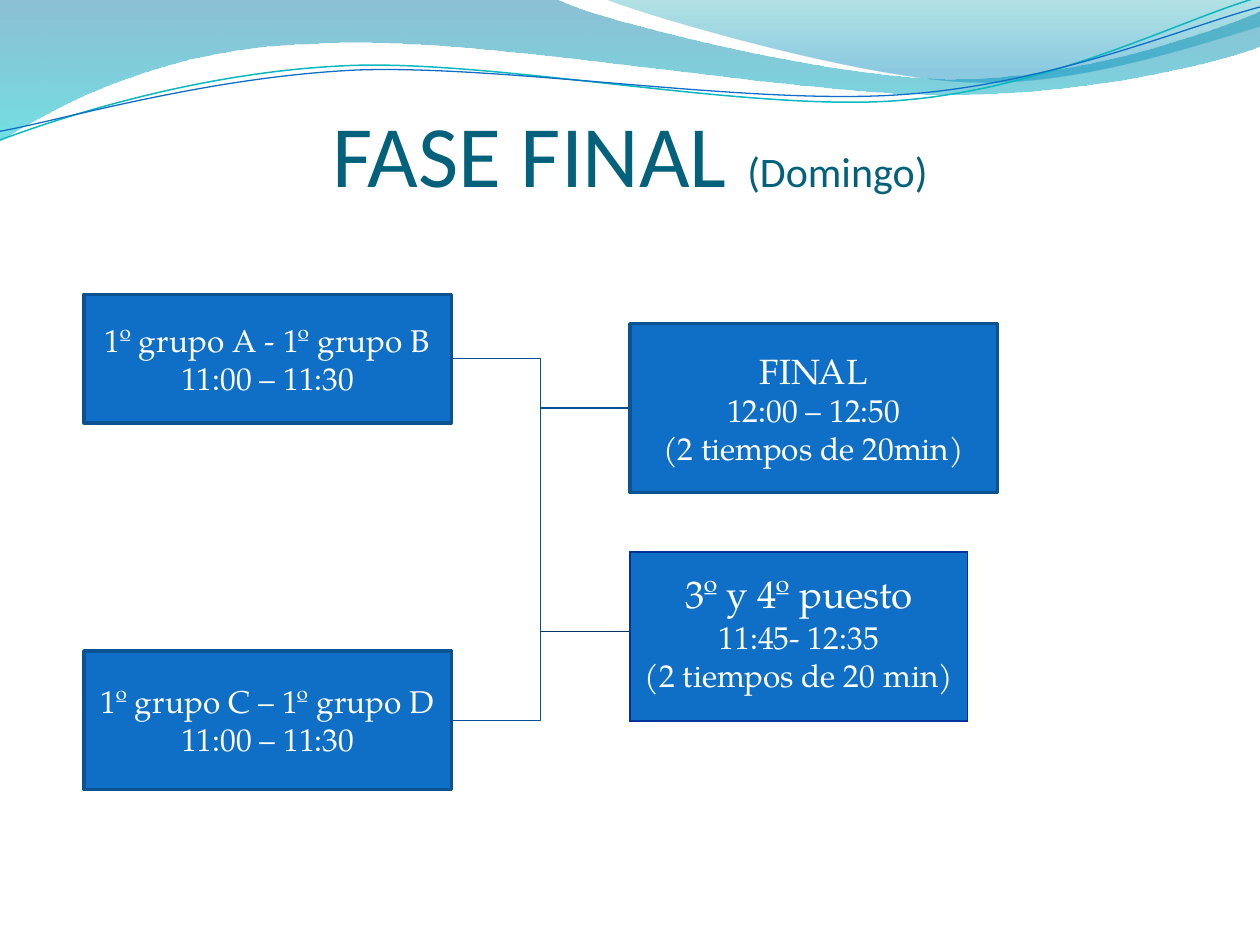
"""Build the final-phase tournament bracket slide."""
from lxml.etree import SubElement
from pptx import Presentation
from pptx.dml.color import RGBColor
from pptx.enum.shapes import MSO_CONNECTOR as Connector, MSO_SHAPE as Shape
from pptx.enum.text import MSO_ANCHOR as Anchor, MSO_AUTO_SIZE as AutoSize, PP_ALIGN as Align
from pptx.oxml.ns import qn
from pptx.util import Pt

WHITE = RGBColor(0xFF, 0xFF, 0xFF)
BLUE = RGBColor(0x0F, 0x6F, 0xC6)
BOX_EDGE = RGBColor(0x0B, 0x52, 0x92)
TABLE_EDGE = RGBColor(0x00, 0x33, 0x99)
LINK = RGBColor(0x06, 0x50, 0x93)
NAVY = RGBColor(0x00, 0x33, 0x66)
TITLE = RGBColor(0x04, 0x61, 0x7B)
TURQUOISE = RGBColor(0x0A, 0xB8, 0xBF)
LEFT, RIGHT = 1, 3

BAND_STOPS = [(0, RGBColor(0x00, 0x74, 0xA1), 45), (1, RGBColor(0x00, 0xC6, 0xCF), 55)]
CREST_STOPS = [(0, RGBColor(0x00, 0xA1, 0xA9), 30), (0.8, RGBColor(0x00, 0x8B, 0xBF), 45)]
BAND = [
    [(0, 0)], [(317, -1)],
    [(343, 12), (478, 45), (546, 45)], [(614, 45), (690, 19), (720, 6.5)],
    [(721, 26)],
    [(708, 32), (626, 55), (537, 54)], [(448, 54), (275, 20), (185, 24.5)],
    [(93, 26), (33, 60), (-1, 81)],
]
CREST = [
    [(345, -1)],
    [(366, 8), (491, 45), (554, 47)], [(616, 50), (692, 23), (720, 15)],
    [(720, 0)],
]
UPPER_WAVE = [
    [(0, 80)],
    [(35, 67), (114, 41), (199, 37.5)], [(284, 34), (427, 64), (513, 57.5)],
    [(600, 51), (675, 11), (719, -1.5)],
]
LOWER_WAVE = [
    [(0, 75)],
    [(34, 69), (118, 44), (204, 40)], [(290, 37), (430, 60.5), (516, 54)],
    [(602, 48), (678, 15), (720, 4)],
]


def add_span(para, text, *, size=18, font="TeX Gyre Pagella", color=WHITE):
    """Add formatted text to a centred paragraph."""
    para.alignment = Align.CENTER
    span = para.add_run()
    span.text = text
    span.font.size = Pt(size)
    span.font.name = font
    span.font.color.rgb = color


def add_lines(frame, lines, gap=0):
    """Fill a text frame with one paragraph per (text, size) pair."""
    for index, (text, size) in enumerate(lines):
        para = frame.add_paragraph() if index else frame.paragraphs[0]
        para.space_before = Pt(gap if index else 0)
        add_span(para, text, size=size)


class BracketSlide:
    """Hold the bracket style and the current slide."""

    def __init__(self, deck):
        """Add a title-only page to the deck."""
        self.page = deck.slides.add_slide(deck.slide_layouts[5])
        self.shapes = self.page.shapes

    def outline(self, segments, close):
        """Add a freeform whose three-point segments are cubic curves."""
        start, *rest = [(Pt(x), Pt(y)) for segment in segments for x, y in segment]
        builder = self.shapes.build_freeform(*start)
        builder.add_line_segments(rest, close=close)
        shape = builder.convert_to_shape()
        shape.shadow.inherit = False
        steps = iter(list(shape._element.iter(qn("a:lnTo"))))
        for segment in segments[1:]:
            group = [next(steps) for _ in segment]
            if len(group) == 3:
                curve = group[0]
                curve.tag = qn("a:cubicBezTo")
                for step in group[1:]:
                    curve.append(step[0])
                    step.getparent().remove(step)
        return shape

    def band(self, segments, stops):
        """Add a closed wave with a translucent downward gradient."""
        shape = self.outline(segments, True)
        shape.line.fill.background()
        shape.fill.gradient()
        shape.fill.gradient_angle = 270
        for stop, (position, color, _) in zip(shape.fill.gradient_stops, stops):
            stop.position = position
            stop.color.rgb = color
        for node, (_, _, opacity) in zip(shape._element.iter(qn("a:srgbClr")), stops):
            SubElement(node, qn("a:alpha"), val=str(opacity * 1000))

    def wave(self, segments, color, width):
        """Add an open wavy line."""
        shape = self.outline(segments, False)
        shape.fill.background()
        shape.line.color.rgb = color
        shape.line.width = Pt(width)

    def title(self, left, top, width, height, spans):
        """Place the title and write its (text, size) spans."""
        title = self.shapes.title
        title.left, title.top, title.width, title.height = map(Pt, (left, top, width, height))
        frame = title.text_frame
        frame.auto_size = AutoSize.NONE
        frame.word_wrap = True
        frame.vertical_anchor = Anchor.BOTTOM
        frame.margin_left = frame.margin_right = frame.margin_bottom = 0
        for text, size in spans:
            add_span(frame.paragraphs[0], text, size=size, font="Calibri", color=TITLE)

    def box(self, left, top, height, lines, width=210):
        """Add a match box."""
        box = self.shapes.add_shape(Shape.RECTANGLE, *map(Pt, (left, top, width, height)))
        box.shadow.inherit = False
        box.fill.solid()
        box.fill.fore_color.rgb = BLUE
        box.line.color.rgb = BOX_EDGE
        box.line.width = Pt(2)
        box.text_frame.vertical_anchor = Anchor.MIDDLE
        add_lines(box.text_frame, lines)
        return box

    def connector(self, kind, color, ends=(0, 0, 0, 0)):
        """Add a thin shadowless connector."""
        line = self.shapes.add_connector(kind, *map(Pt, ends))
        line.line.color.rgb = color
        line.line.width = Pt(0.75)
        SubElement(line._element.spPr, qn("a:effectLst"))
        return line

    def link(self, source, target):
        """Join two boxes with an elbow from right side to left side."""
        elbow = self.connector(Connector.ELBOW, LINK)
        elbow.begin_connect(source, RIGHT)
        elbow.end_connect(target, LEFT)

    def table(self, left, top, width, height, lines):
        """Add a one-cell bordered table."""
        table = self.shapes.add_table(1, 1, *map(Pt, (left, top, width, height))).table
        table.first_row = table.horz_banding = False
        cell = table.cell(0, 0)
        cell.margin_top = Pt(16.4)
        add_lines(cell.text_frame, lines, gap=4)
        properties = cell._tc.get_or_add_tcPr()
        for side in ("lnL", "lnR", "lnT", "lnB"):
            edge = SubElement(properties, qn(f"a:{side}"), w=str(Pt(1)))
            SubElement(SubElement(edge, qn("a:solidFill")), qn("a:srgbClr"), val=str(TABLE_EDGE))
        cell.fill.solid()
        cell.fill.fore_color.rgb = BLUE


def main():
    """Compose and save the slide."""
    deck = Presentation()
    deck.slide_width, deck.slide_height = Pt(720), Pt(540)
    slide = BracketSlide(deck)

    slide.band(BAND, BAND_STOPS)
    slide.band(CREST, CREST_STOPS)
    slide.wave(UPPER_WAVE, TURQUOISE, 0.85)
    slide.wave(LOWER_WAVE, BLUE, 0.75)
    slide.title(36, 43.7, 648, 73.4, [("FASE FINAL ", 50), ("(Domingo)", 24)])

    semifinals = [
        slide.box(48, 168.2, 73.4, [("1º grupo A - 1º grupo B", 18), ("11:00 – 11:30", 18)]),
        slide.box(48, 372, 79.2, [("1º grupo C – 1º grupo D", 18), ("11:00 – 11:30", 18)]),
    ]
    final = slide.box(360, 185, 96.5, [("FINAL", 20), ("12:00 – 12:50", 18), ("(2 tiempos de 20min)", 18)])
    for semifinal in semifinals:
        slide.link(semifinal, final)
    slide.table(360, 315.4, 193, 96.5,
                [("3º y 4º puesto", 22), ("11:45- 12:35", 18), ("(2 tiempos de 20 min)", 18)])
    slide.connector(Connector.STRAIGHT, NAVY, (309, 360.7, 360, 360.7))
    deck.save("out.pptx")


if __name__ == "__main__":
    main()
